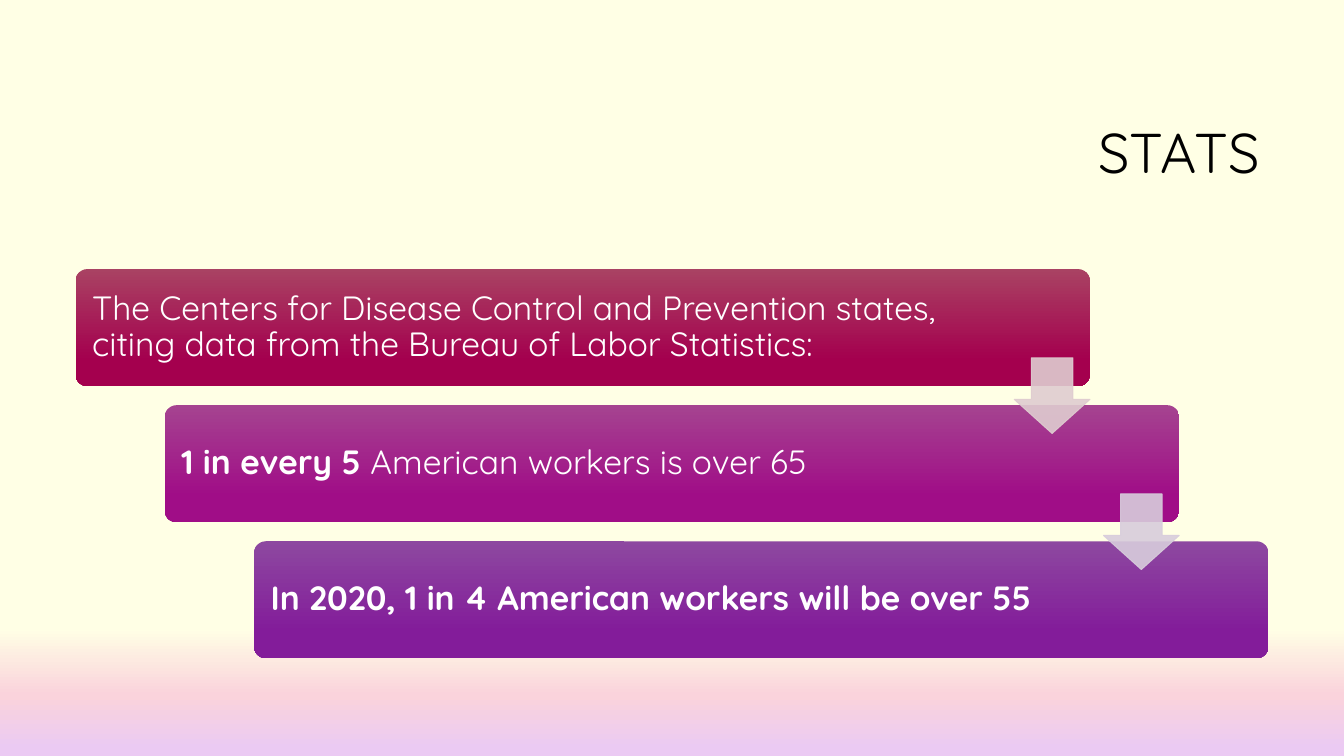
from lxml.etree import SubElement
from pptx import Presentation
from pptx.dml.color import RGBColor
from pptx.enum.shapes import MSO_SHAPE
from pptx.enum.text import MSO_ANCHOR, PP_ALIGN
from pptx.oxml.ns import qn
from pptx.util import Inches, Pt

FONT = "Quicksand"
CARD_LEFT, CARD_TOP = 0.75, 2.67
CARD_WIDTH, CARD_HEIGHT = 10.06, 1.16
COLUMN_STEP, ROW_STEP = 0.885, 1.35
ARROW_SIZE, ARROW_DROP = 0.75, 0.88

SKY = [(0, "FFFFE5"), (83, "FFFFE5"), (92, "FAD3DC"), (99, "EBCAF3"), (100, "EBCAF3")]
CARDS = [
    ("A94263", "A4004E",
     [("The Centers for Disease Control and Prevention states, "
       "citing data from the Bureau of Labor Statistics:", False)]),
    ("A54390", "A00D87",
     [("1 in every 5 ", True), ("American workers is over 65", False)]),
    ("8D48A0", "831C9A",
     [("In 2020, 1 in 4 American workers will be over 55", True)]),
]
ARROW_COLOURS = ["DFCCD0", "D8CDDC"]


def colour(code):
    return RGBColor.from_string(code)


def paint_gradient(fill, owner, stops):
    fill.gradient()
    fill.gradient_angle = 270
    stop_list = owner.find(".//" + qn("a:gsLst"))
    for old_stop in list(stop_list):
        stop_list.remove(old_stop)
    for percent, code in stops:
        stop = SubElement(stop_list, qn("a:gs"), pos=str(percent * 1000))
        SubElement(stop, qn("a:srgbClr"), val=code)


def write_runs(frame, runs, size, ink, align):
    frame.word_wrap = True
    frame.vertical_anchor = MSO_ANCHOR.MIDDLE
    paragraph = frame.paragraphs[0]
    paragraph.alignment = align
    paragraph.line_spacing = 0.9
    for words, bold in runs:
        run = paragraph.add_run()
        run.text = words
        run.font.name = FONT
        run.font.size = Pt(size)
        run.font.bold = bold
        run.font.color.rgb = colour(ink)


def add_title(slide, words):
    title = slide.shapes.add_textbox(
        Inches(3.17), Inches(0.84), Inches(9.42), Inches(1.41))
    write_runs(title.text_frame, [(words, False)], 40, "000000", PP_ALIGN.RIGHT)


def add_card(slide, step, top_colour, base_colour, runs):
    card = slide.shapes.add_shape(
        MSO_SHAPE.ROUNDED_RECTANGLE,
        Inches(CARD_LEFT + step * COLUMN_STEP), Inches(CARD_TOP + step * ROW_STEP),
        Inches(CARD_WIDTH), Inches(CARD_HEIGHT))
    card.adjustments[0] = 0.1
    card.shadow.inherit = False
    card.line.fill.background()
    paint_gradient(card.fill, card.element, [(0, top_colour), (78, base_colour)])
    frame = card.text_frame
    frame.margin_left = Inches(0.13)
    frame.margin_right = Inches(1.32)
    write_runs(frame, runs, 24, "FFFFFF", PP_ALIGN.LEFT)


def add_arrow(slide, step, code):
    arrow = slide.shapes.add_shape(
        MSO_SHAPE.DOWN_ARROW,
        Inches(CARD_LEFT + CARD_WIDTH - ARROW_SIZE + step * COLUMN_STEP),
        Inches(CARD_TOP + ARROW_DROP + step * ROW_STEP),
        Inches(ARROW_SIZE), Inches(ARROW_SIZE))
    arrow.adjustments[0] = 0.55
    arrow.adjustments[1] = 0.45
    arrow.shadow.inherit = False
    arrow.line.width = Pt(0.75)
    for fill in (arrow.fill, arrow.line.fill):
        fill.solid()
        fill.fore_color.rgb = colour(code)
    for tint in arrow.element.spPr.iter(qn("a:srgbClr")):
        SubElement(tint, qn("a:alpha"), val="90000")


def main():
    deck = Presentation()
    deck.slide_width = Inches(13.33)
    deck.slide_height = Inches(7.5)
    slide = deck.slides.add_slide(deck.slide_layouts[6])
    paint_gradient(slide.background.fill, slide.element, SKY)
    add_title(slide, "STATS")
    for step, card in enumerate(CARDS):
        add_card(slide, step, *card)
    for step, code in enumerate(ARROW_COLOURS):
        add_arrow(slide, step, code)
    deck.save("out.pptx")


if __name__ == "__main__":
    main()
